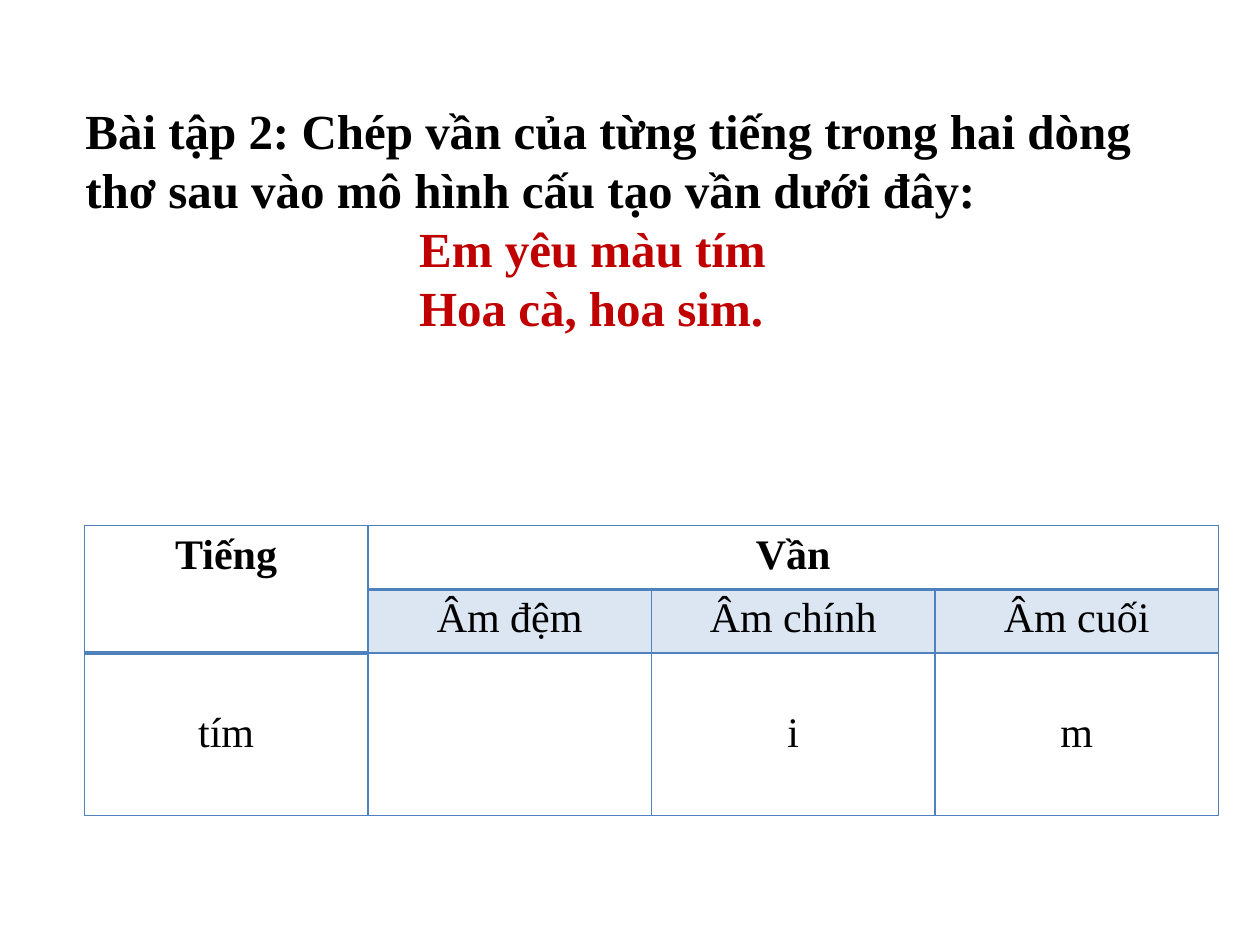
from dataclasses import dataclass

from lxml import etree
from pptx import Presentation
from pptx.dml.color import RGBColor
from pptx.enum import text
from pptx.oxml.ns import qn
from pptx.util import Inches, Pt


@dataclass(frozen=True)
class Theme:
    font: str = "Times New Roman"
    ink: str = "000000"
    verse: str = "C00000"
    rule: str = "4F81BD"
    band: str = "DCE6F2"
    task_size: int = 28
    cell_size: int = 24
    thin: int = 1
    thick: int = 2


THEME = Theme()
W, H = 10, 7.5


def share_box(x, y, w, h):
    return Inches(x * W), Inches(y * H), Inches(w * W), Inches(h * H)


def style_runs(p, size, color, bold):
    for r in p.runs:
        r.font.name = THEME.font
        r.font.size = Pt(size)
        r.font.bold = bold
        r.font.color.rgb = RGBColor.from_string(color)


def add_task(slide, box, task, verses, indent):
    tf = slide.shapes.add_textbox(*box).text_frame
    tf.word_wrap = True
    tf.text = task
    style_runs(tf.paragraphs[0], THEME.task_size, THEME.ink, True)
    for verse in verses:
        p = tf.add_paragraph()
        p.text = verse
        p._p.get_or_add_pPr().set("marL", str(int(box[2] * indent)))
        style_runs(p, THEME.task_size, THEME.verse, True)


def add_border(cell, side, width):
    tc_pr = cell._tc.get_or_add_tcPr()
    ln = etree.SubElement(tc_pr, qn(f"a:ln{side}"), w=str(Pt(width)))
    fill = etree.SubElement(ln, qn("a:solidFill"))
    etree.SubElement(fill, qn("a:srgbClr"), val=THEME.rule)


def fill_cell(cell, color):
    if color:
        cell.fill.solid()
        cell.fill.fore_color.rgb = RGBColor.from_string(color)
    else:
        cell.fill.background()


def add_rhyme_table(slide, box, rows, row_shares):
    n_cols = len(rows[0])
    table = slide.shapes.add_table(len(rows), n_cols, *box).table
    table.first_row = table.horz_banding = False
    for col in table.columns:
        col.width = box[2] // n_cols
    for row, share in zip(table.rows, row_shares):
        row.height = int(box[3] * share)
    table.cell(0, 0).merge(table.cell(1, 0))
    table.cell(0, 1).merge(table.cell(0, n_cols - 1))

    for i, row in enumerate(rows):
        for j, label in enumerate(row):
            cell = table.cell(i, j)
            header = i == 0 or (i == 1 and j == 0)
            for side in "LRTB":
                heavy = header and side == "B"
                add_border(cell, side, THEME.thick if heavy else THEME.thin)
            fill_cell(cell, THEME.band if i == 1 and j > 0 else None)
            if i == 2:
                cell.margin_top = Inches(0.45)
            if label:
                cell.text = label
                p = cell.text_frame.paragraphs[0]
                p.alignment = text.PP_ALIGN.CENTER
                style_runs(p, THEME.cell_size, THEME.ink, header)


def main():
    prs = Presentation()
    prs.slide_width, prs.slide_height = Inches(W), Inches(H)
    slide = prs.slides.add_slide(prs.slide_layouts[6])
    add_task(
        slide,
        share_box(0.058, 0.1, 0.883, 0.453),
        "Bài tập 2: Chép vần của từng tiếng trong hai dòng thơ sau vào mô hình cấu tạo vần dưới đây:",
        ["Em yêu màu tím", "Hoa cà, hoa sim."],
        indent=0.3,
    )
    add_rhyme_table(
        slide,
        share_box(0.067, 0.556, 0.9, 0.307),
        [
            ["Tiếng", "Vần", "", ""],
            ["", "Âm đệm", "Âm chính", "Âm cuối"],
            ["tím", "", "i", "m"],
        ],
        row_shares=[0.22, 0.22, 0.56],
    )
    prs.save("out.pptx")


if __name__ == "__main__":
    main()
